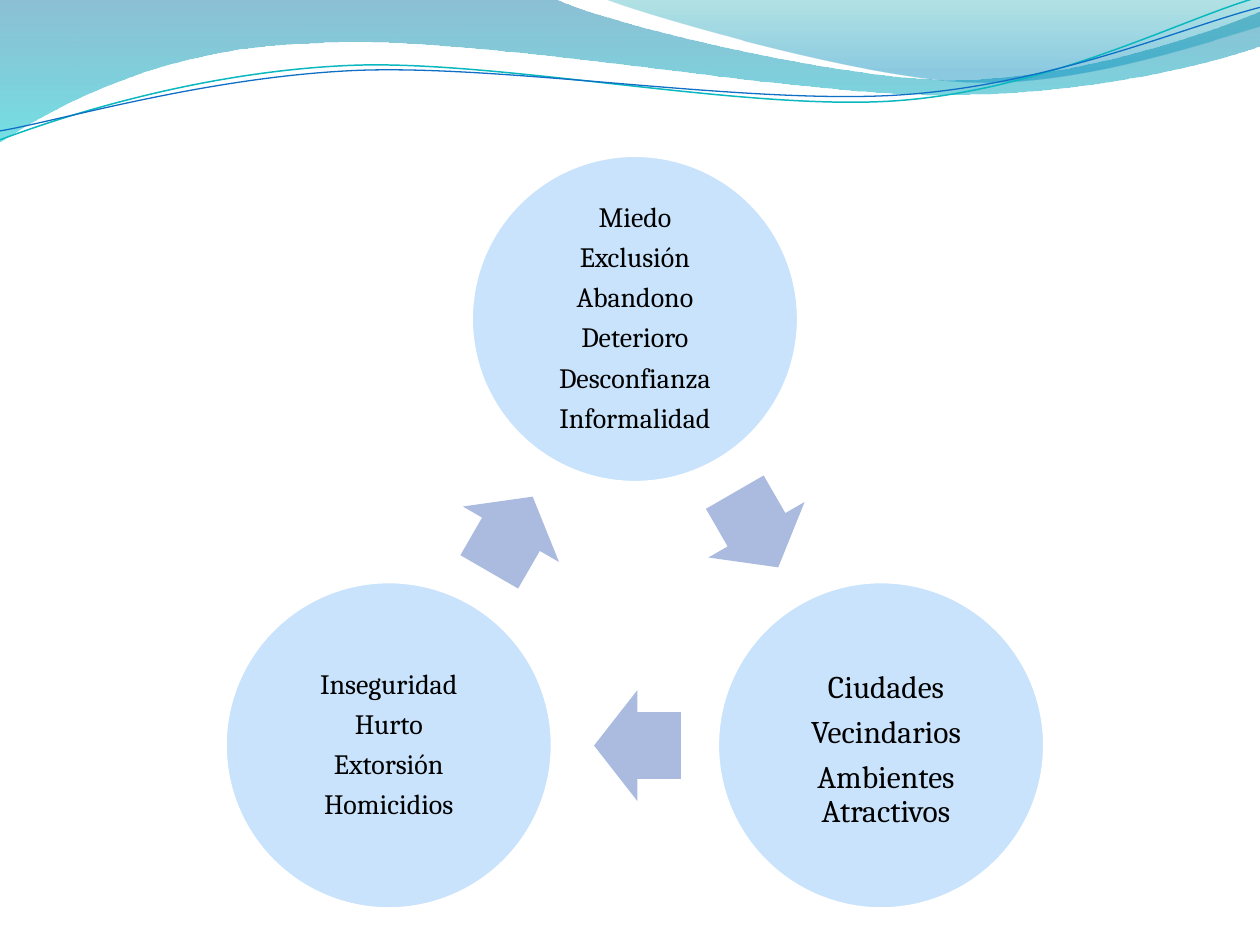
import math
import pptx
import pptx.util
import pptx.dml.color
import pptx.enum.shapes
import pptx.enum.text
import lxml.etree

Cm = pptx.util.Cm
Pt = pptx.util.Pt
RGB = pptx.dml.color.RGBColor.from_string
SHAPES = pptx.enum.shapes.MSO_SHAPE
NAMESPACE = "{http://schemas.openxmlformats.org/drawingml/2006/main}"

COLORS = {
    "deep blue": "0074A1", "turquoise": "00C6CF",
    "teal": "00A1A9", "sky": "008BBF",
    "teal line": "0AB8BF", "blue line": "0F6FC6",
    "circle": "C8E3FB", "arrow": "ABBBDF",
    "white": "FFFFFF", "text": "000000",
}

presentation = pptx.Presentation()
presentation.slide_width = Cm(25.4)
presentation.slide_height = Cm(19.05)
slide = presentation.slides.add_slide(presentation.slide_layouts[6])


def add_curve(start, segments, close):
    """Draw straight (x, y) and cubic (x1, y1, x2, y2, x, y) segments, in cm."""
    points = [(Cm(x), Cm(y)) for segment in segments
              for x, y in zip(segment[::2], segment[1::2])]
    builder = slide.shapes.build_freeform(Cm(start[0]), Cm(start[1]))
    builder.add_line_segments(points, close=close)
    shape = builder.convert_to_shape()
    shape.shadow.inherit = False
    # Turn each run of three straight steps into one cubic curve
    steps = iter(list(shape._element.spPr.iter(NAMESPACE + "lnTo")))
    for segment in segments:
        group = [next(steps) for _ in segment[::2]]
        if len(group) == 3:
            curve = lxml.etree.Element(NAMESPACE + "cubicBezTo")
            group[0].addprevious(curve)
            for step in group:
                curve.append(step[0])
                step.getparent().remove(step)
    return shape


# Header waves: start, segments, gradient stops (position, color, opacity)
waves = [
    ((0, 0),
     [(11.18, -0.03),
      (12.09, 0.43, 16.87, 1.6, 19.25, 1.6),
      (21.67, 1.6, 24.33, 0.66, 25.4, 0.23),
      (25.43, 0.91),
      (24.97, 1.12, 22.1, 1.93, 18.95, 1.91),
      (15.8, 1.91, 9.7, 0.71, 6.53, 0.86),
      (3.28, 0.91, 1.17, 2.11, -0.03, 2.87)],
     [(0, "deep blue", 45), (1, "turquoise", 55)]),
    ((12.17, -0.03),
     [(12.93, 0.28, 17.32, 1.57, 19.53, 1.65),
      (21.74, 1.75, 24.41, 0.81, 25.4, 0.53),
      (25.4, 0)],
     [(0, "teal", 30), (0.8, "sky", 45)]),
]
for start, segments, stops in waves:
    wave = add_curve(start, segments, True)
    wave.line.fill.background()
    wave.fill.gradient()
    wave.fill.gradient_angle = 270
    for stop, (position, color, opacity) in zip(wave.fill.gradient_stops, stops):
        stop.position = position
        stop.color.rgb = RGB(COLORS[color])
    color_elements = wave._element.spPr.iter(NAMESPACE + "srgbClr")
    for element, (position, color, opacity) in zip(color_elements, stops):
        alpha = lxml.etree.SubElement(element, NAMESPACE + "alpha")
        alpha.set("val", str(opacity * 1000))

# Header lines: start, segments, color, width
header_lines = [
    ((0, 2.82),
     [(1.22, 2.36, 4.01, 1.45, 7.04, 1.32),
      (10.03, 1.19, 15.06, 2.26, 18.11, 2.03),
      (21.16, 1.8, 23.83, 0.38, 25.35, -0.05)], "teal line", 0.85),
    ((0, 2.64),
     [(1.19, 2.44, 4.17, 1.55, 7.19, 1.42),
      (10.24, 1.3, 15.16, 2.13, 18.21, 1.91),
      (21.23, 1.7, 23.9, 0.53, 25.4, 0.15)], "blue line", 0.75),
]
for start, segments, color, width in header_lines:
    line = add_curve(start, segments, False)
    line.fill.background()
    line.line.color.rgb = RGB(COLORS[color])
    line.line.width = Pt(width)


def add_centered(preset, x, y, width, height, color):
    """Add a filled preset shape around its centre, in cm."""
    shape = slide.shapes.add_shape(
        preset, Cm(x - width / 2), Cm(y - height / 2), Cm(width), Cm(height))
    shape.shadow.inherit = False
    shape.fill.solid()
    shape.fill.fore_color.rgb = RGB(COLORS[color])
    shape.line.fill.background()
    return shape


# Cycle, clockwise from the top: words, size, inset, text offset,
# then centre and rotation of the arrow to the next circle
center_x, center_y, radius = 12.8, 12.16, 5.73
diameter, text_side = 6.6, 4.67
stages = [
    (["Miedo", "Exclusión", "Abandono", "Deterioro", "Desconfianza",
      "Informalidad"], 16, 0.05, 0, (15.25, 10.68, 60)),
    (["Ciudades", "Vecindarios", "Ambientes Atractivos"],
     18, 0.08, 0.1, (12.85, 15.03, 180)),
    (["Inseguridad", "Hurto", "Extorsión", "Homicidios"],
     16, 0.05, 0, (10.3, 10.77, 300)),
]
for index, (words, size, inset, offset, arrow_place) in enumerate(stages):
    angle = math.radians(120 * index - 90)
    x = center_x + radius * math.cos(angle)
    y = center_y + radius * math.sin(angle)
    circle = add_centered(SHAPES.OVAL, x, y, diameter, diameter, "circle")
    circle.line.color.rgb = RGB(COLORS["white"])
    circle.line.width = Pt(2)

    text_box = slide.shapes.add_textbox(
        Cm(x - text_side / 2 + offset), Cm(y - text_side / 2 + offset),
        Cm(text_side), Cm(text_side))
    frame = text_box.text_frame
    frame.word_wrap = True
    frame.vertical_anchor = pptx.enum.text.MSO_ANCHOR.MIDDLE
    frame.margin_left = frame.margin_right = Cm(inset)
    frame.margin_top = frame.margin_bottom = Cm(inset)
    for number, word in enumerate(words):
        paragraph = frame.add_paragraph() if number else frame.paragraphs[0]
        paragraph.alignment = pptx.enum.text.PP_ALIGN.CENTER
        paragraph.line_spacing = 0.9
        paragraph.space_after = Pt(size * 0.35)
        run = paragraph.add_run()
        run.text = word
        run.font.name = "Cambria"
        run.font.size = Pt(size)
        run.font.color.rgb = RGB(COLORS["text"])

    arrow_x, arrow_y, rotation = arrow_place
    arrow = add_centered(SHAPES.RIGHT_ARROW, arrow_x, arrow_y, 1.75, 2.24, "arrow")
    arrow.adjustments[0] = 0.6
    arrow.adjustments[1] = 0.5
    arrow.rotation = rotation

presentation.save("out.pptx")
